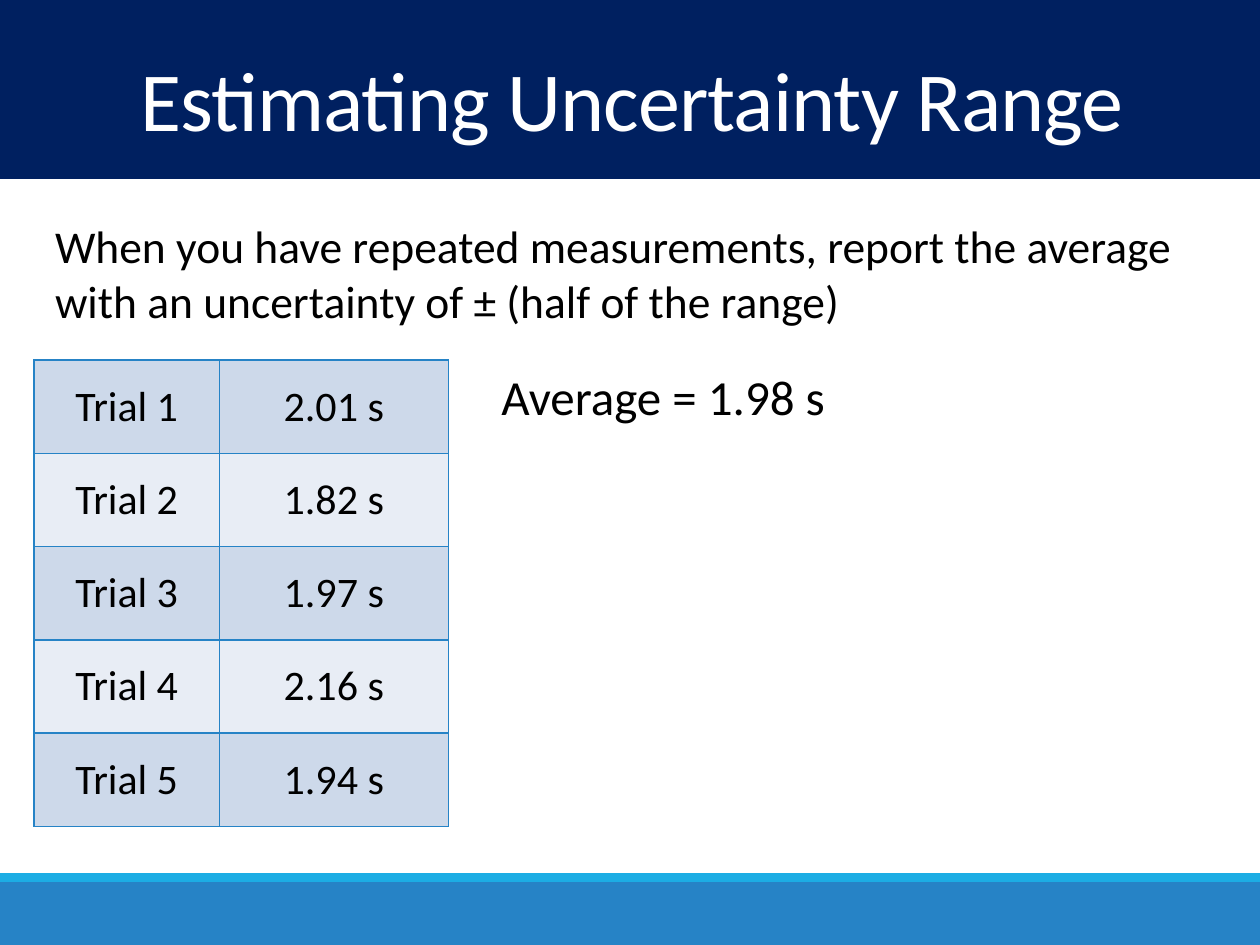
import pptx
import pptx.dml.color
import pptx.enum.shapes
import pptx.enum.text
import pptx.oxml
import pptx.oxml.ns
import pptx.util

Cm, Pt = pptx.util.Cm, pptx.util.Pt
Align = pptx.enum.text.PP_ALIGN
Anchor = pptx.enum.text.MSO_ANCHOR


class Theme:
    font = "Calibri"
    navy, blue, cyan = "002060", "2683C6", "1CADE4"
    white, black = "FFFFFF", "000000"
    bands = ("CDD9EA", "E8EDF5")
    title, note, body, cell = 48, 28, 26, 24
    border = 1


def tint(code):
    return pptx.dml.color.RGBColor.from_string(code)


def write(frame, text, size, color=Theme.black, align=Align.LEFT,
          lead=None, track=None):
    para = frame.paragraphs[0]
    para.alignment = align
    if lead:
        para.line_spacing = lead
    run = para.add_run()
    run.text = text
    run.font.name = Theme.font
    run.font.size = Pt(size)
    run.font.color.rgb = tint(color)
    if track:
        run._r.get_or_add_rPr().set("spc", str(round(track * 100)))


class Deck:
    def __init__(self, theme, width, height):
        self.theme = theme
        self.show = pptx.Presentation()
        self.show.slide_width, self.show.slide_height = Cm(width), Cm(height)
        self.slide = self.show.slides.add_slide(self.show.slide_layouts[6])

    def bar(self, top, height, color):
        kind = pptx.enum.shapes.MSO_SHAPE.RECTANGLE
        shape = self.slide.shapes.add_shape(
            kind, 0, Cm(top), self.show.slide_width, Cm(height))
        shape.shadow.inherit = False
        shape.fill.solid()
        shape.fill.fore_color.rgb = tint(color)
        shape.line.fill.background()

    def text(self, box, text, size, wrap=True, grow=True,
             anchor=Anchor.TOP, **style):
        frame = self.slide.shapes.add_textbox(*map(Cm, box)).text_frame
        frame.word_wrap = wrap
        fit = pptx.enum.text.MSO_AUTO_SIZE
        frame.auto_size = fit.SHAPE_TO_FIT_TEXT if grow else fit.NONE
        frame.vertical_anchor = anchor
        write(frame, text, size, **style)

    def edge(self, cell):
        props = cell._tc.get_or_add_tcPr()
        space = pptx.oxml.ns.nsdecls("a")
        for side in "LRTB":
            props.append(pptx.oxml.parse_xml(
                f'<a:ln{side} {space} w="{Pt(self.theme.border)}"><a:solidFill>'
                f'<a:srgbClr val="{self.theme.blue}"/></a:solidFill></a:ln{side}>'))

    def table(self, left, top, widths, pitch, rows):
        grid = self.slide.shapes.add_table(
            len(rows), len(widths), Cm(left), Cm(top),
            Cm(sum(widths)), Cm(pitch * len(rows))).table
        grid.first_row = grid.horz_banding = False
        for col, width in zip(grid.columns, widths):
            col.width = Cm(width)
        for i, row in enumerate(rows):
            grid.rows[i].height = Cm(pitch)
            for j, text in enumerate(row):
                cell = grid.cell(i, j)
                self.edge(cell)
                cell.fill.solid()
                cell.fill.fore_color.rgb = tint(self.theme.bands[i % 2])
                cell.vertical_anchor = Anchor.MIDDLE
                write(cell.text_frame, text, self.theme.cell, align=Align.CENTER)


def main():
    theme = Theme()
    deck = Deck(theme, 25.4, 19.05)

    # Footer bands and title banner
    deck.bar(17.78, 1.27, theme.blue)
    deck.bar(17.6, 0.18, theme.cyan)
    deck.bar(0, 3.61, theme.navy)

    # Title and rule
    deck.text((0.08, 1.07, 25.32, 2.13), "Estimating Uncertainty Range",
              theme.title, grow=False, anchor=Anchor.MIDDLE, color=theme.white,
              align=Align.CENTER, lead=0.85, track=-0.5)
    deck.text((0.86, 4.27, 23.75, 2.49),
              "When you have repeated measurements, report the average "
              "with an uncertainty of ± (half of the range)", theme.body)

    # Trials and their average
    times = ("2.01", "1.82", "1.97", "2.16", "1.94")
    rows = [(f"Trial {n}", f"{time} s") for n, time in enumerate(times, 1)]
    deck.table(0.69, 7.26, (3.73, 4.62), 1.88, rows)
    deck.text((9.86, 7.26, 7.29, 1.45), "Average = 1.98 s", theme.note, wrap=False)

    deck.show.save("out.pptx")


if __name__ == "__main__":
    main()
